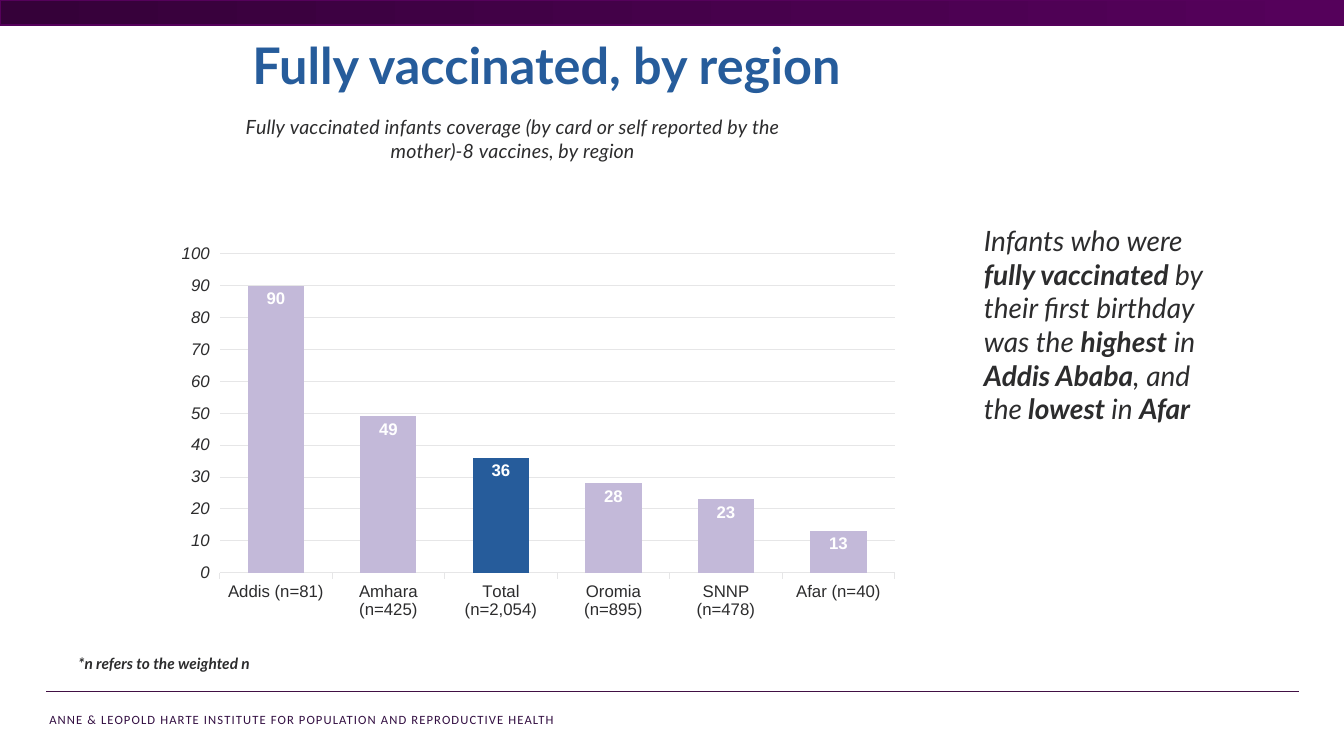
import pptx
import pptx.chart.data
import pptx.dml.color
import pptx.enum.chart
import pptx.enum.shapes
import pptx.enum.text
import pptx.util
from lxml import etree

SLIDE_WIDTH = pptx.util.Inches(13.33)
SLIDE_HEIGHT = pptx.util.Inches(7.5)
COLORS = {
    "ink": "2C2C2D",
    "blue": "265C9B",
    "lavender": "C3B9D9",
    "grid": "E6E6E7",
    "white": "FFFFFF",
    "plum": "330F42",
    "rule": "411044",
    "banner_dark": "350139",
    "banner_light": "55015B",
}
COVERAGE = {
    "Addis (n=81)": 90,
    "Amhara (n=425)": 49,
    "Total (n=2,054)": 36,
    "Oromia (n=895)": 28,
    "SNNP (n=478)": 23,
    "Afar (n=40)": 13,
}
CHART_TITLE = (
    "Fully vaccinated infants coverage (by card or self reported by the "
    "mother)-8 vaccines, by region"
)
FINDING = [
    ("Infants who were ", False),
    ("fully vaccinated ", True),
    ("by their first birthday was the ", False),
    ("highest", True),
    (" in ", False),
    ("Addis Ababa", True),
    (", and the", False),
    (" lowest ", True),
    ("in ", False),
    ("Afar", True),
]


def color(name):
    return pptx.dml.color.RGBColor.from_string(COLORS[name])


def across(percent):
    return round(SLIDE_WIDTH * percent / 100)


def down(percent):
    return round(SLIDE_HEIGHT * percent / 100)


def area(left, top, width, height):
    return across(left), down(top), across(width), down(height)


def style_font(font, size, hue, face, bold=False, italic=False):
    font.size = pptx.util.Pt(size)
    font.color.rgb = color(hue)
    font.name = face
    font.bold = bold
    font.italic = italic


def add_run(paragraph, words, size, hue, face="Lato", bold=False, italic=False):
    run = paragraph.add_run()
    run.text = words
    style_font(run.font, size, hue, face, bold, italic)
    return run


def add_text(slide, place):
    frame = slide.shapes.add_textbox(*place).text_frame
    frame.word_wrap = True
    return frame.paragraphs[0]


def add_banner(slide):
    banner = slide.shapes.add_shape(
        pptx.enum.shapes.MSO_SHAPE.RECTANGLE, *area(0, 0, 100, 3.33)
    )
    banner.shadow.inherit = False
    banner.fill.gradient()
    banner.fill.gradient_angle = 0
    for stop, hue in zip(banner.fill.gradient_stops, ("banner_dark", "banner_light")):
        stop.color.rgb = color(hue)
    banner.line.color.rgb = color("banner_light")
    banner.line.width = pptx.util.Pt(1)


def add_rule(slide):
    rule = slide.shapes.add_connector(
        pptx.enum.shapes.MSO_CONNECTOR.STRAIGHT,
        across(96.62), down(91.47), across(3.45), down(91.47),
    )
    rule.line.color.rgb = color("rule")
    rule.line.width = pptx.util.Pt(1.25)
    etree.SubElement(rule.element.spPr, pptx.oxml.ns.qn("a:effectLst"))


def add_title(slide, words):
    title = slide.shapes.title
    title.left, title.top, title.width, title.height = area(6.45, 3.87, 69.32, 9.47)
    frame = title.text_frame
    frame.word_wrap = True
    frame.auto_size = pptx.enum.text.MSO_AUTO_SIZE.NONE
    frame.vertical_anchor = pptx.enum.text.MSO_ANCHOR.TOP
    heading = frame.paragraphs[0]
    heading.alignment = pptx.enum.text.PP_ALIGN.CENTER
    add_run(heading, words, 36, "blue", bold=True)


def set_plot_area(chart, **shares):
    plot_area = chart.element.chart.plotArea
    for old in plot_area.findall(pptx.oxml.ns.qn("c:layout")):
        plot_area.remove(old)
    layout = etree.Element(pptx.oxml.ns.qn("c:layout"))
    manual = etree.SubElement(layout, pptx.oxml.ns.qn("c:manualLayout"))
    settings = {"layoutTarget": "inner", "xMode": "edge", "yMode": "edge", **shares}
    for tag, value in settings.items():
        etree.SubElement(manual, pptx.oxml.ns.qn(f"c:{tag}")).set("val", str(value))
    plot_area.insert(0, layout)


def style_axes(chart):
    regions, percent = chart.category_axis, chart.value_axis
    for axis in (regions, percent):
        axis.major_tick_mark = pptx.enum.chart.XL_TICK_MARK.OUTSIDE
        axis.minor_tick_mark = pptx.enum.chart.XL_TICK_MARK.NONE
        style_font(axis.tick_labels.font, 12, "ink", "Arial", italic=axis is percent)
    percent.minimum_scale, percent.maximum_scale, percent.major_unit = 0, 100, 10
    percent.tick_labels.number_format = "0"
    percent.tick_labels.number_format_is_linked = False
    percent.format.line.fill.background()
    percent.has_major_gridlines = True
    for line in (regions.format.line, percent.major_gridlines.format.line):
        line.color.rgb = color("grid")
        line.width = pptx.util.Pt(0.75)


def style_bars(plot):
    plot.gap_width = 100
    plot.overlap = 100
    plot.vary_by_categories = False
    bars = plot.series[0]
    bars.format.fill.solid()
    bars.format.fill.fore_color.rgb = color("lavender")
    total = bars.points[list(COVERAGE).index("Total (n=2,054)")]
    total.format.fill.solid()
    total.format.fill.fore_color.rgb = color("blue")
    labels = bars.data_labels
    labels.show_value = True
    labels.number_format = "0"
    labels.number_format_is_linked = False
    labels.position = pptx.enum.chart.XL_LABEL_POSITION.INSIDE_END
    style_font(labels.font, 12, "white", "Arial", bold=True)


def add_coverage_chart(slide):
    coverage = pptx.chart.data.CategoryChartData(number_format="0")
    coverage.categories = list(COVERAGE)
    coverage.add_series(CHART_TITLE, list(COVERAGE.values()))
    chart = slide.shapes.add_chart(
        pptx.enum.chart.XL_CHART_TYPE.COLUMN_STACKED,
        *area(9.75, 12.27, 56.86, 70.4), coverage,
    ).chart
    style_font(chart.font, 10, "ink", "Arial")
    chart.has_legend = False
    chart.has_title = True
    chart.chart_title.include_in_layout = False
    caption = chart.chart_title.text_frame.paragraphs[0]
    add_run(caption, CHART_TITLE, 14, "ink", italic=True)
    set_plot_area(chart, x=0.116, y=0.303, w=0.884, h=0.599)
    style_axes(chart)
    style_bars(chart.plots[0])


def main():
    deck = pptx.Presentation()
    deck.slide_width, deck.slide_height = SLIDE_WIDTH, SLIDE_HEIGHT
    slide = deck.slides.add_slide(deck.slide_layouts.get_by_name("Title Only"))

    footer = add_text(slide, area(2.93, 93.47, 55.36, 3.33))
    institute = add_run(
        footer,
        "ANNE & LEOPOLD HARTE INSTITUTE FOR POPULATION AND REPRODUCTIVE HEALTH",
        9, "plum", "Calibri",
    )
    institute.font._element.set("spc", "80")
    add_rule(slide)
    add_banner(slide)
    add_coverage_chart(slide)
    note = add_text(slide, area(5.1, 85.87, 24.16, 3.87))
    add_run(note, "*n refers to the weighted n", 11, "ink", bold=True, italic=True)
    add_title(slide, "Fully vaccinated, by region ")
    finding = add_text(slide, area(72.47, 28.93, 19.35, 32.8))
    for words, bold in FINDING:
        add_run(finding, words, 20, "ink", bold=bold, italic=True)

    deck.save("out.pptx")


if __name__ == "__main__":
    main()
